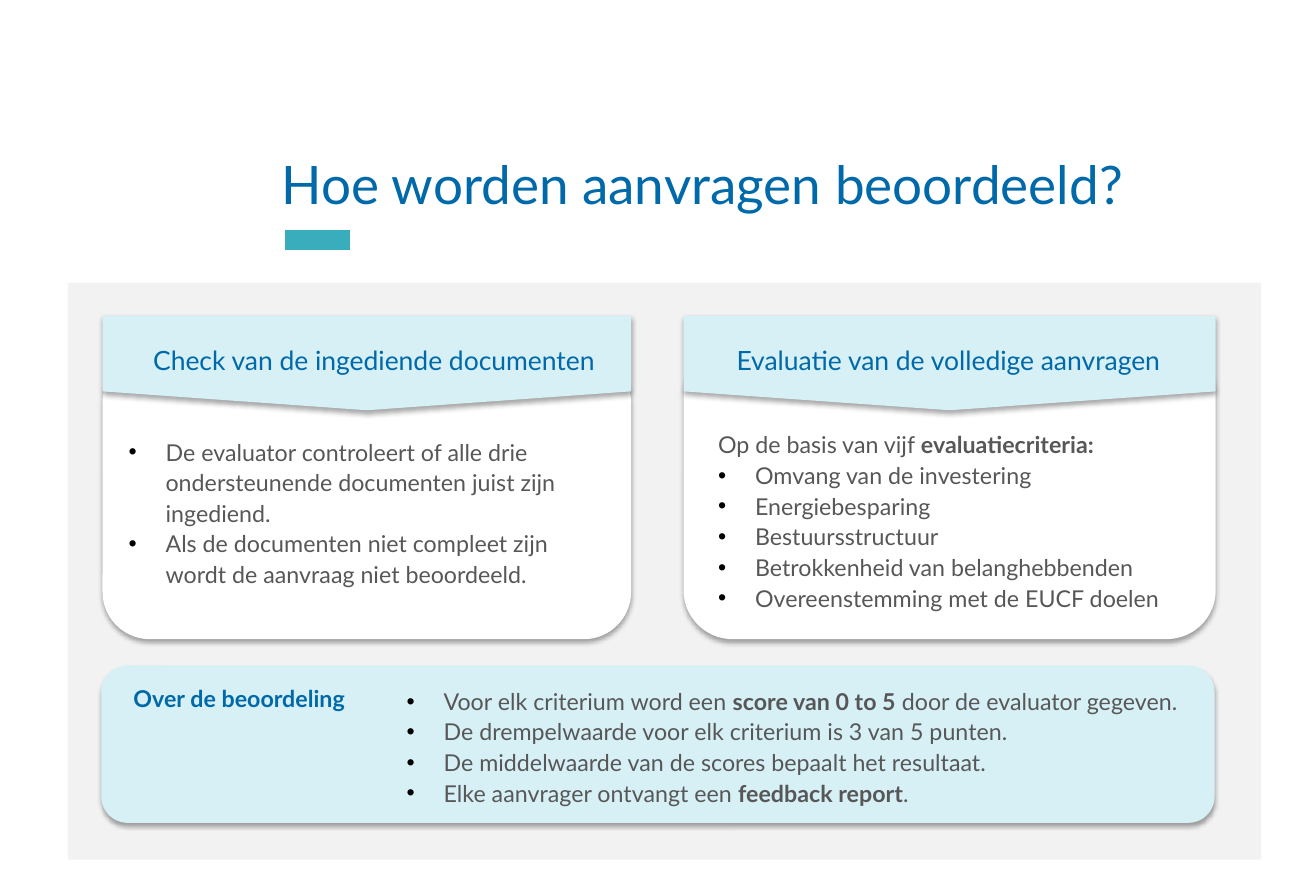
from lxml import etree
from pptx import Presentation
from pptx import util as u
from pptx.dml.color import RGBColor
from pptx.enum import shapes, text
from pptx.oxml import ns

Inches = u.Inches
COLORS = {
    "panel": "F2F2F2",
    "card": "FFFFFF",
    "tint": "D6F0F6",
    "heading": "0069A9",
    "body": "575757",
    "bullet": "000000",
    "shadow": "000000",
    "accent": "39ADBB",
}
FONT = "Lato"
INDENT = 0.31
BANNER_TOP, BANNER_HEIGHT = 2.65, 0.79
CARD_BOTTOM = 5.36


def rgb(name):
    return RGBColor.from_string(COLORS[name])


def sub(parent, tag, **attributes):
    return etree.SubElement(parent, ns.qn(tag), attributes)


def add_shadow(shape):
    effects = shape._element.spPr.find(ns.qn("a:effectLst"))
    shadow = sub(effects, "a:outerShdw", blurRad=str(u.Pt(3.1)), dist=str(u.Pt(1.8)),
                 dir="5400000", algn="t", rotWithShape="0")
    color = sub(shadow, "a:srgbClr", val=COLORS["shadow"])
    sub(color, "a:alpha", val="35000")


def add_block(slide, kind, box, fill, shadow=True):
    block = slide.shapes.add_shape(kind, *map(Inches, box))
    block.shadow.inherit = False
    block.fill.solid()
    block.fill.fore_color.rgb = rgb(fill)
    block.line.fill.background()
    if shadow:
        add_shadow(block)


def add_bullet(paragraph):
    props = paragraph._p.get_or_add_pPr()
    props.set("marL", str(Inches(INDENT)))
    props.set("indent", str(-Inches(INDENT)))
    sub(sub(props, "a:buClr"), "a:srgbClr", val=COLORS["bullet"])
    sub(props, "a:buFont", typeface="Arial")
    sub(props, "a:buChar", char="•")


def add_text(slide, box, lines, size=14, color="body", bold=False, bullets_from=None,
             align=text.PP_ALIGN.LEFT, anchor=text.MSO_ANCHOR.TOP, spacing=1.1):
    """Write lines; **marks** set bold, bullets start at line bullets_from."""
    frame = slide.shapes.add_textbox(*map(Inches, box)).text_frame
    frame.word_wrap = True
    frame.vertical_anchor = anchor
    for number, line in enumerate(lines):
        paragraph = frame.add_paragraph() if number else frame.paragraphs[0]
        paragraph.alignment = align
        paragraph.line_spacing = spacing
        if bullets_from is not None and number >= bullets_from:
            add_bullet(paragraph)
        for part, words in enumerate(line.split("**")):
            if not words:
                continue
            run = paragraph.add_run()
            run.text = words
            run.font.name = FONT
            run.font.size = u.Pt(size)
            run.font.bold = bold or part % 2 == 1
            run.font.color.rgb = rgb(color)


def add_accent(slide, left, right, y):
    accent = slide.shapes.add_connector(shapes.MSO_CONNECTOR.STRAIGHT, Inches(left),
                                        Inches(y), Inches(right), Inches(y))
    accent.line.color.rgb = rgb("accent")
    accent.line.width = u.Pt(12)
    sub(accent._element.spPr, "a:effectLst")


def add_card(slide, left, width, top, heading, heading_box, lines, lines_box, bullets_from):
    add_block(slide, shapes.MSO_SHAPE.ROUNDED_RECTANGLE,
              (left, top, width, CARD_BOTTOM - top), "card")
    add_text(slide, lines_box, lines, bullets_from=bullets_from)
    add_block(slide, shapes.MSO_SHAPE.FLOWCHART_OFFPAGE_CONNECTOR,
              (left, BANNER_TOP, width, BANNER_HEIGHT), "tint")
    add_text(slide, heading_box, [heading], size=16, color="heading",
             align=text.PP_ALIGN.CENTER, anchor=text.MSO_ANCHOR.BOTTOM)


def main():
    deck = Presentation()
    deck.slide_width, deck.slide_height = Inches(11.03), Inches(7.48)
    slide = deck.slides.add_slide(deck.slide_layouts[6])

    # Grey panel
    add_block(slide, shapes.MSO_SHAPE.RECTANGLE, (0.57, 2.37, 10, 4.84), "panel", shadow=False)

    # Two assessment steps
    add_card(slide, 0.86, 4.43, 2.98,
             "Check van de ingediende documenten", (0.98, 2.74, 4.31, 0.46),
             ["De evaluator controleert of alle drie ondersteunende documenten "
              "juist zijn ingediend.",
              "Als de documenten niet compleet zijn wordt de aanvraag niet beoordeeld."],
             (0.98, 3.6, 4.13, 1.45), bullets_from=0)
    add_card(slide, 5.73, 4.46, 2.9,
             "Evaluatie van de volledige aanvragen", (5.92, 2.74, 4.06, 0.46),
             ["Op de basis van vijf **evaluatiecriteria:**",
              "Omvang van de investering",
              "Energiebesparing",
              "Bestuursstructuur",
              "Betrokkenheid van belanghebbenden",
              "Overeenstemming met de EUCF doelen"],
             (5.92, 3.54, 4.06, 1.57), bullets_from=1)

    # Scoring rules
    add_block(slide, shapes.MSO_SHAPE.ROUNDED_RECTANGLE, (0.85, 5.58, 9.33, 1.32), "tint")
    add_text(slide, (1.02, 5.67, 2.06, 0.36), ["Over de beoordeling"],
             color="heading", bold=True)
    add_text(slide, (3.31, 5.69, 6.8, 1.07),
             ["Voor elk criterium word een **score van 0 to 5** door de evaluator gegeven.",
              "De drempelwaarde voor elk criterium is 3 van 5 punten.",
              "De middelwaarde van de scores bepaalt het resultaat.",
              "Elke aanvrager ontvangt een **feedback report**."],
             bullets_from=0)

    # Title with accent bar
    add_text(slide, (2.26, 0.85, 7.32, 1), ["Hoe worden aanvragen beoordeeld?"],
             size=32, color="heading", anchor=text.MSO_ANCHOR.BOTTOM, spacing=0.8)
    add_accent(slide, 2.39, 2.93, 2.01)

    deck.save("out.pptx")


if __name__ == "__main__":
    main()
